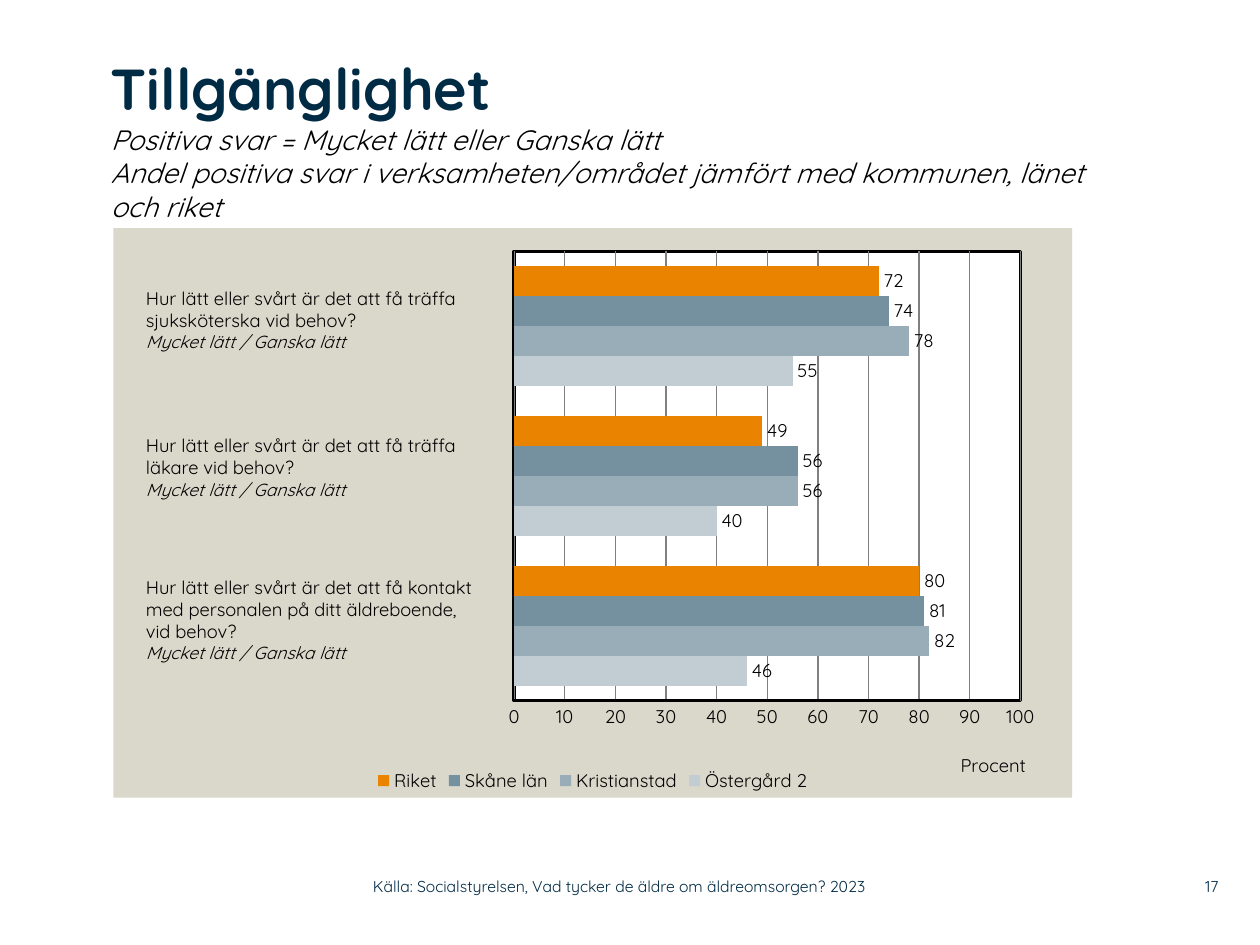
from lxml import etree
from pptx import Presentation
from pptx.chart.data import CategoryChartData
from pptx.dml.color import RGBColor
from pptx.enum import chart as ch, text
from pptx.oxml import parse_xml
from pptx.oxml.ns import nsdecls, qn
from pptx.util import Inches, Pt

FONT = "Quicksand"
NAVY = RGBColor(0x00, 0x2B, 0x45)
BLACK = RGBColor(0x00, 0x00, 0x00)
WHITE = RGBColor(0xFF, 0xFF, 0xFF)
GRID_GREY = RGBColor(0x80, 0x80, 0x80)
SAND = RGBColor(0xDA, 0xD7, 0xCB)

SERIES = [
    ("Östergård 2", (46, 40, 55), RGBColor(0xC2, 0xCD, 0xD3)),
    ("Kristianstad", (82, 56, 78), RGBColor(0x99, 0xAD, 0xB9)),
    ("Skåne län", (81, 56, 74), RGBColor(0x75, 0x90, 0x9F)),
    ("Riket", (80, 49, 72), RGBColor(0xE9, 0x83, 0x00)),
]
POSITIVE = "Mycket lätt / Ganska lätt"
QUESTIONS = [
    (2.23, 2.99, 0.81, ["Hur lätt eller svårt är det att få träffa sjuksköterska vid behov?"]),
    (3.4, 2.93, 0.81, ["Hur lätt eller svårt är det att få träffa", "läkare vid behov?"]),
    (4.52, 3.01, 0.98, ["Hur lätt eller svårt är det att få kontakt",
                        "med personalen på ditt äldreboende,", "vid behov?"]),
]


def style(font, size, color=BLACK, **extra):
    values = {"name": FONT, "size": Pt(size), **extra}
    for key, value in values.items():
        setattr(font, key, value)
    font.color.rgb = color


def add_box(slide, box, margin=0.0, anchor=text.MSO_ANCHOR.TOP):
    frame = slide.shapes.add_textbox(*map(Inches, box)).text_frame
    frame.word_wrap = True
    frame.vertical_anchor = anchor
    for side in ("left", "right"):
        setattr(frame, f"margin_{side}", Inches(2 * margin))
    for side in ("top", "bottom"):
        setattr(frame, f"margin_{side}", Inches(margin))
    return frame


def add_heading(slide):
    paragraph = add_box(slide, (0.88, 0.42, 7.77, 1.39)).paragraphs[0]
    topic = paragraph.add_run()
    topic.text = "Tillgänglighet"
    style(topic.font, 33, NAVY, bold=True)
    for line in ("Positiva svar = Mycket lätt eller Ganska lätt",
                 "Andel positiva svar i verksamheten/området jämfört med kommunen, länet och riket"):
        paragraph.add_line_break()
        run = paragraph.add_run()
        run.text = line
        style(run.font, 16, italic=True)


def add_question(slide, top, width, height, lines):
    frame = add_box(slide, (1.06, top, width, height), margin=0.05)
    frame.text = "\n".join([*lines, POSITIVE])
    *question, answer = frame.paragraphs
    for paragraph in question:
        style(paragraph.runs[0].font, 10.5)
    style(answer.runs[0].font, 10, italic=True)


def add_footer(slide, box, words, align):
    paragraph = add_box(slide, box, anchor=text.MSO_ANCHOR.MIDDLE).paragraphs[0]
    paragraph.alignment = align
    run = paragraph.add_run()
    run.text = words
    style(run.font, 9, NAVY)


def set_layout(element, before, inner=False, **place):
    """Place a chart part by fractions of the chart, ahead of the named child."""
    for old in element.findall(qn("c:layout")):
        element.remove(old)
    layout = parse_xml(f"<c:layout {nsdecls('c')}><c:manualLayout/></c:layout>")
    values = {"layoutTarget": "inner"} if inner else {}
    values.update(xMode="edge", yMode="edge", **place)
    for tag, value in values.items():
        etree.SubElement(layout[0], qn(f"c:{tag}")).set("val", str(value))
    element.find(qn(f"c:{before}")).addprevious(layout)


def fill_xml(color, line=""):
    return parse_xml(f'<c:spPr {nsdecls("c", "a")}><a:solidFill><a:srgbClr val="{color}"/>'
                     f"</a:solidFill>{line}</c:spPr>")


def format_backgrounds(chart):
    area = chart.plots[0]._element.getparent()
    set_layout(area, "barChart", inner=True, x=0.418, y=0.041, w=0.528, h=0.789)
    border = (f'<a:ln w="{Pt(2)}"><a:solidFill><a:srgbClr val="{BLACK}"/>'
              "</a:solidFill></a:ln>")
    area.append(fill_xml(WHITE, border))
    area.getparent().addnext(fill_xml(SAND, "<a:ln><a:noFill/></a:ln>"))


def format_axes(chart):
    chart.category_axis.visible = False
    axis = chart.value_axis
    settings = {"minimum_scale": 0, "maximum_scale": 100, "major_unit": 10,
                "major_tick_mark": ch.XL_TICK_MARK.NONE, "has_major_gridlines": True}
    for key, value in settings.items():
        setattr(axis, key, value)
    axis.format.line.color.rgb = BLACK
    axis.format.line.width = Pt(2)
    grid = axis.major_gridlines.format.line
    grid.color.rgb = GRID_GREY
    grid.width = Pt(0.75)
    title = axis.axis_title
    title.text_frame.text = "Procent"
    style(title.text_frame.paragraphs[0].runs[0].font, 10.5, bold=False)
    set_layout(title._element, "overlay", x=0.88, y=0.915)


def add_answer_chart(slide):
    data = CategoryChartData()
    data.categories = ["1", "2", "3"]
    for name, values, _ in SERIES:
        data.add_series(name, values)
    box = map(Inches, (0.9, 1.81, 7.61, 4.52))
    chart = slide.shapes.add_chart(ch.XL_CHART_TYPE.BAR_CLUSTERED, *box, data).chart
    style(chart.font, 10.5)
    chart.has_title = False
    chart.has_legend = True
    chart.legend.position = ch.XL_LEGEND_POSITION.BOTTOM
    chart.legend.include_in_layout = False
    style(chart.legend.font, 10.5)
    plot = chart.plots[0]
    plot.gap_width = 100
    plot.vary_by_categories = False
    for series, (_, _, color) in zip(plot.series, SERIES):
        series.format.fill.solid()
        series.format.fill.fore_color.rgb = color
        series.data_labels.show_value = True
        series.data_labels.position = ch.XL_LABEL_POSITION.OUTSIDE_END
    format_axes(chart)
    format_backgrounds(chart)


def main():
    deck = Presentation()
    deck.slide_width, deck.slide_height = Inches(10), Inches(7.5)
    slide = deck.slides.add_slide(deck.slide_layouts[6])
    add_answer_chart(slide)
    add_heading(slide)
    for question in QUESTIONS:
        add_question(slide, *question)
    add_footer(slide, (9.2, 6.89, 0.47, 0.29), "17", text.PP_ALIGN.RIGHT)
    add_footer(slide, (2.96, 6.89, 4.43, 0.29),
               "Källa: Socialstyrelsen, Vad tycker de äldre om äldreomsorgen? 2023",
               text.PP_ALIGN.LEFT)
    deck.save("out.pptx")


if __name__ == "__main__":
    main()
